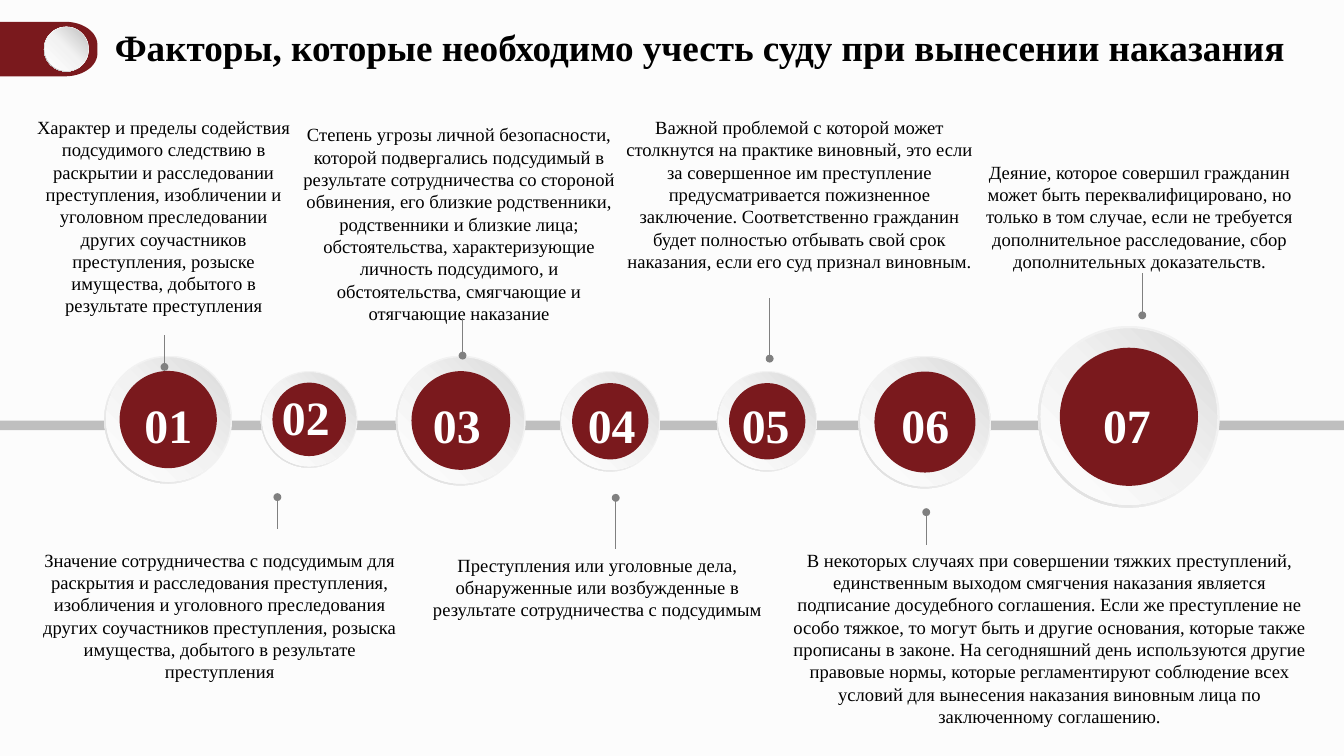
from math import cos, sin, pi

from lxml.etree import SubElement
from pptx import Presentation
from pptx.dml.color import RGBColor
from pptx.enum.shapes import MSO_CONNECTOR as Link, MSO_SHAPE as Kind
from pptx.enum.text import MSO_AUTO_SIZE as Fit, PP_ALIGN as Align
from pptx.oxml.ns import qn
from pptx.util import Cm, Pt

RED, BLACK, WHITE = "7A191D", "000000", "FFFFFF"
RIM = ("F2F2F2", "F2F2F2", "D9D9D9")
DISC = ("FFFFFF", "F2F2F2", "D9D9D9")


def tint(code):
    return RGBColor.from_string(code)


class Deck:
    font = "Times New Roman"

    def __init__(self, wide, high):
        self.prs = Presentation()
        self.prs.slide_width, self.prs.slide_height = Cm(wide), Cm(high)
        self.slide = self.prs.slides.add_slide(self.prs.slide_layouts[6])
        self.items = self.slide.shapes

    def ground(self, code):
        fill = self.slide.background.fill
        fill.solid()
        fill.fore_color.rgb = tint(code)

    def paint(self, shape, code):
        shape.shadow.inherit = False
        shape.fill.solid()
        shape.fill.fore_color.rgb = tint(code)
        shape.line.fill.background()

    def blend(self, shape, codes, mid, angle):
        shape.shadow.inherit = False
        shape.line.fill.background()
        geom = shape._element.spPr.find(qn("a:prstGeom"))
        grad = SubElement(shape._element.spPr, qn("a:gradFill"), rotWithShape="1")
        stops = SubElement(grad, qn("a:gsLst"))
        for code, pos in zip(codes, (0, mid, 100)):
            stop = SubElement(stops, qn("a:gs"), pos=str(pos * 1000))
            SubElement(stop, qn("a:srgbClr"), val=code)
        SubElement(grad, qn("a:lin"), ang=str(angle * 60000), scaled="0")
        geom.addnext(grad)

    def shape(self, kind, left, top, wide, high):
        return self.items.add_shape(kind, Cm(left), Cm(top), Cm(wide), Cm(high))

    def bar(self, top, high, code):
        band = self.items.add_shape(Kind.RECTANGLE, 0, Cm(top), self.prs.slide_width, Cm(high))
        self.paint(band, code)

    def ring(self, left, top, size, rim=RIM, disc=DISC):
        edge = self.shape(Kind.DONUT, left, top, size, size)
        edge.adjustments[0] = 0.05
        self.blend(edge, rim, 55, 135)
        self.blend(self.core(left, top, size, 0.97), disc, 51, 315)

    def core(self, left, top, size, part):
        gap = size * (1 - part) / 2
        return self.shape(Kind.OVAL, left + gap, top + gap, size * part, size * part)

    def badge(self, left, top, size):
        self.ring(left, top, size)
        self.paint(self.core(left, top, size, 0.76), RED)

    def text(self, words, box, size, pad, code=BLACK, bold=False, align=Align.CENTER):
        frame = self.items.add_textbox(*map(Cm, box)).text_frame
        frame.word_wrap = True
        frame.auto_size = Fit.SHAPE_TO_FIT_TEXT
        frame.margin_left = frame.margin_right = Cm(pad)
        frame.margin_top = frame.margin_bottom = Cm(pad / 2)
        para = frame.paragraphs[0]
        para.text = words
        para.alignment = align
        font = para.runs[0].font
        font.name, font.size, font.bold = self.font, Pt(size), bold
        font.color.rgb = tint(code)

    def stem(self, left, start, end):
        line = self.items.add_connector(Link.STRAIGHT, Cm(left), Cm(start), Cm(left), Cm(end))
        line.line.color.rgb = tint("808080")
        line.line.width = Pt(0.5)
        SubElement(line.line._get_or_add_ln(), qn("a:headEnd"), type="oval")
        SubElement(line._element.spPr, qn("a:effectLst"))

    def tab(self, top, base, mid, rx, ry):
        turns = [i * pi / 24 for i in range(13)]
        upper = [(mid + rx * sin(a), top + ry - ry * cos(a)) for a in turns]
        lower = [(x, top + base - y) for x, y in reversed(upper)]
        pen = self.items.build_freeform(0, Cm(top))
        pen.add_line_segments([(Cm(x), Cm(y)) for x, y in upper + lower + [(0, base)]])
        self.paint(pen.convert_to_shape(), RED)


BADGES = [
    ((2.77, 9.45, 3.4), (3.18, 10.24, 2.59), Align.CENTER),
    ((6.93, 9.86, 2.57), (6.93, 10.03, 2.39), Align.CENTER),
    ((10.52, 9.45, 3.45), (10.92, 10.24, 2.44), Align.CENTER),
    ((14.88, 9.86, 2.67), (15.09, 10.24, 2.54), Align.LEFT),
    ((19.05, 9.86, 2.67), (19.05, 10.24, 2.59), Align.CENTER),
    ((22.81, 9.45, 3.53), (23.42, 10.24, 2.64), Align.LEFT),
    ((27.58, 8.66, 4.83), (28.78, 10.24, 2.87), Align.LEFT),
]

NOTES = [
    ("Характер и пределы содействия подсудимого следствию в раскрытии и расследовании "
     "преступления, изобличении и уголовном преследовании других соучастников "
     "преступления, розыске имущества, добытого в результате преступления",
     (0.58, 2.9, 7.54, 6.17), (4.37, 9.75, 8.89)),
    ("Степень угрозы личной безопасности, которой подвергались подсудимый в результате "
     "сотрудничества со стороной обвинения, его близкие родственники, родственники и "
     "близкие лица; обстоятельства, характеризующие личность подсудимого, и "
     "обстоятельства, смягчающие и отягчающие наказание",
     (7.54, 3.1, 9.32, 6.15), (12.29, 9.45, 8.46)),
    ("Важной проблемой с которой может столкнутся на практике виновный, это если за "
     "совершенное им преступление предусматривается пожизненное заключение. "
     "Соответственно гражданин будет полностью отбывать свой срок наказания, если его "
     "суд признал виновным.",
     (16.28, 2.9, 9.93, 6.76), (20.45, 9.53, 7.92)),
    ("Деяние, которое совершил гражданин может быть переквалифицировано, но только в том "
     "случае, если не требуется дополнительное расследование, сбор дополнительных "
     "доказательств.",
     (25.81, 4.09, 8.94, 3.35), (30.35, 8.38, 7.26)),
    ("Значение сотрудничества с подсудимым для раскрытия и расследования преступления, "
     "изобличения и уголовного преследования других соучастников преступления, розыска "
     "имущества, добытого в результате преступления",
     (0.58, 14.4, 10.52, 4.55), (7.37, 13.21, 14.07)),
    ("Преступления или уголовные дела, обнаруженные или возбужденные в результате "
     "сотрудничества с подсудимым",
     (10.72, 14.53, 10.31, 2.16), (16.36, 13.23, 14.6)),
    ("В некоторых случаях при совершении тяжких преступлений, единственным выходом "
     "смягчения наказания является подписание досудебного соглашения. Если же "
     "преступление не особо тяжкое, то могут быть и другие основания, которые также "
     "прописаны в законе. На сегодняшний день используются другие правовые нормы, "
     "которые регламентируют соблюдение всех условий для вынесения наказания виновным "
     "лица по заключенному соглашению.",
     (20.65, 14.4, 14.48, 5.16), (24.61, 13.61, 14.48)),
]


def main():
    deck = Deck(35.71, 20.09)
    deck.ground("FCFCFC")
    deck.bar(11.18, 0.25, "BFBFBF")
    for num, (disc, (left, top, wide), align) in enumerate(BADGES, 1):
        deck.badge(*disc)
        deck.text(f"{num:02}", (left, top, wide, 2.08), 36, 0.53, WHITE, True, align)
    for words, box, stem in NOTES:
        deck.text(words, box, 14, 0.36)
        deck.stem(*stem)
    deck.tab(0.58, 2.03, 1.73, 0.86, 0.61)
    deck.ring(1.17, 0.71, 1.19, ("FFFFFF", "F2F2F2", "A6A6A6"), ("FFFFFF", "F2F2F2", "BFBFBF"))
    deck.text("Факторы, которые необходимо учесть суду при вынесении наказания",
              (2.59, 0.51, 32, 1.45), 28, 0.25, bold=True)
    deck.prs.save("out.pptx")


if __name__ == "__main__":
    main()
